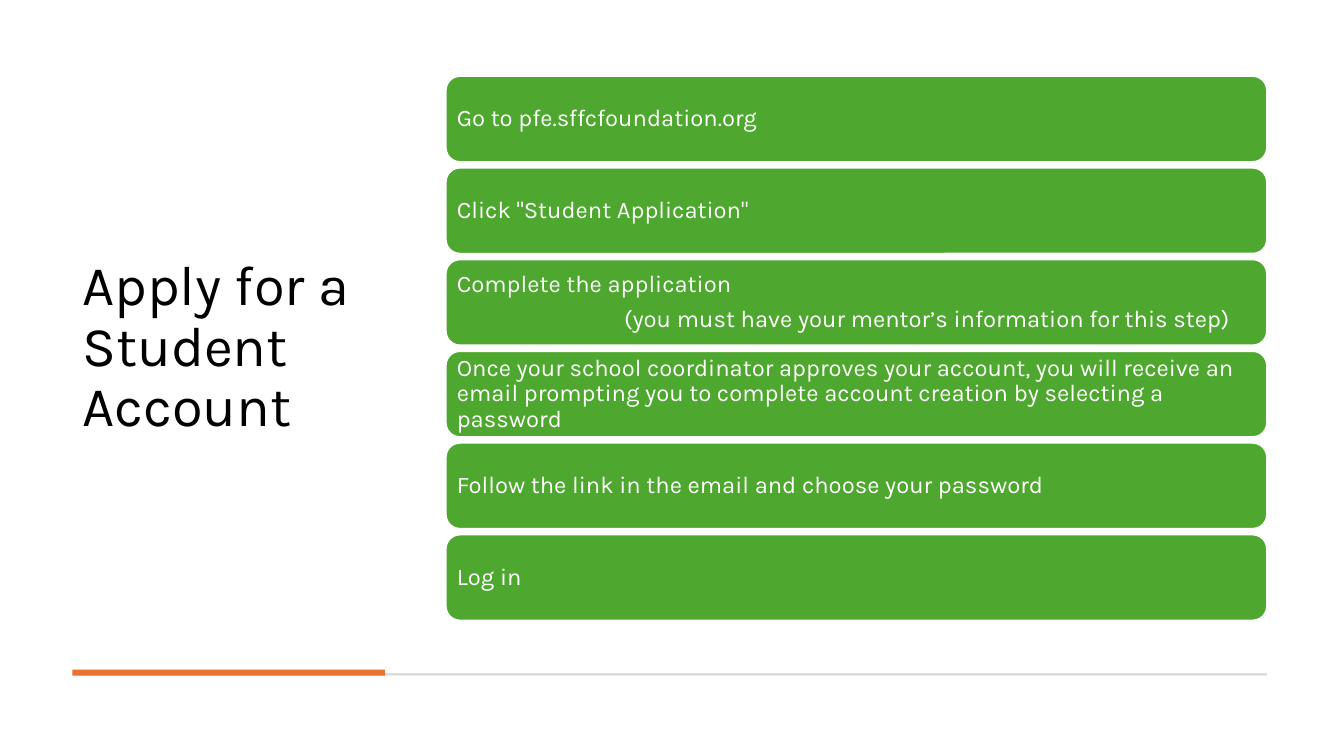
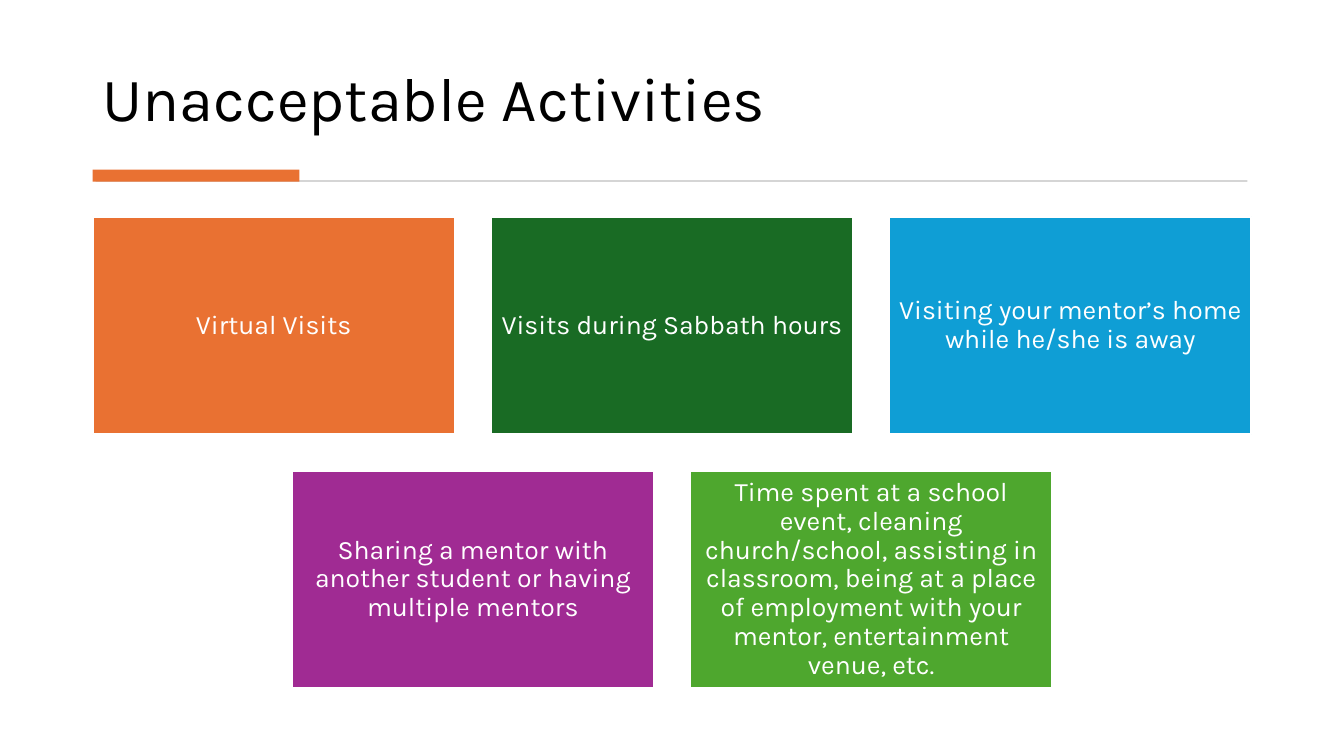
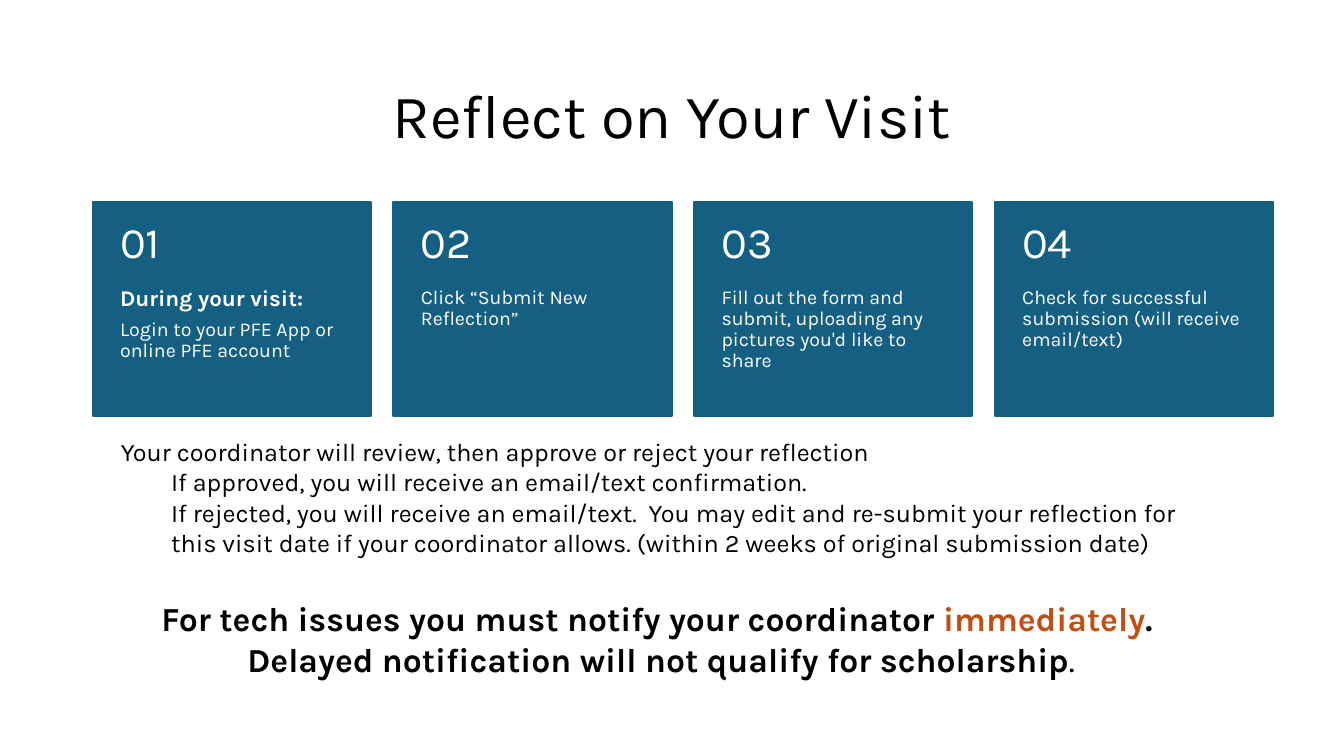
from pptx import Presentation
from pptx.dml.color import RGBColor
from pptx.enum.shapes import MSO_SHAPE
from pptx.enum.text import MSO_ANCHOR, PP_ALIGN
from pptx.util import Pt

COLORS = {
    "black": "000000",
    "white": "FFFFFF",
    "rule": "D5D5D5",
    "orange": "E97132",
    "rust": "C04F15",
    "green": "4EA72E",
    "forest": "196B24",
    "sky": "0F9ED5",
    "purple": "A02B93",
    "teal": "156082",
}
FONT = "Karla"
SLIDE_W, SLIDE_H = 960, 540
DEFAULT_INSETS = (7.2, 3.6, 7.2, 3.6)


def color(name):
    return RGBColor.from_string(COLORS[name])


def apply(target, values):
    for name, value in values.items():
        setattr(target, name, value)


class Deck:
    """Holds the shared style and the slide being filled."""

    def __init__(self):
        self.prs = Presentation()
        apply(self.prs, {"slide_width": Pt(SLIDE_W), "slide_height": Pt(SLIDE_H)})
        self.slide = None

    def new_slide(self):
        self.slide = self.prs.slides.add_slide(self.prs.slide_layouts[6])

    def fill_text(self, shape, paragraphs, size, ink="black", align=PP_ALIGN.LEFT,
                  anchor=MSO_ANCHOR.TOP, insets=DEFAULT_INSETS, spacing=0.9, gap=0):
        """Fill a shape; a paragraph is a string or a dict with runs, indent and size.

        A run is a string or a (string, font values) pair.
        """
        frame = shape.text_frame
        left, top, right, bottom = insets
        apply(frame, {
            "word_wrap": True, "vertical_anchor": anchor,
            "margin_left": Pt(left), "margin_top": Pt(top),
            "margin_right": Pt(right), "margin_bottom": Pt(bottom),
        })
        for index, content in enumerate(paragraphs):
            if isinstance(content, str):
                content = {"runs": [content]}
            paragraph = frame.add_paragraph() if index else frame.paragraphs[0]
            apply(paragraph, {
                "alignment": align, "line_spacing": spacing,
                "space_before": Pt(gap if index else 0), "space_after": Pt(0),
            })
            if "indent" in content:
                paragraph._p.get_or_add_pPr().set("marL", str(Pt(content["indent"])))
            for part in content["runs"]:
                words, look = (part, {}) if isinstance(part, str) else part
                run = paragraph.add_run()
                run.text = words
                apply(run.font, {"name": FONT, "size": Pt(content.get("size", size)),
                                 "bold": look.get("bold", False)})
                run.font.color.rgb = color(look.get("ink", ink))

    def text(self, box, paragraphs, size, **style):
        shape = self.slide.shapes.add_textbox(*map(Pt, box))
        self.fill_text(shape, paragraphs, size, **style)

    def title(self, box, words, size=44, **style):
        self.text(box, [words], size, **style)

    def block(self, box, fill, line=None, kind=MSO_SHAPE.RECTANGLE):
        shape = self.slide.shapes.add_shape(kind, *map(Pt, box))
        shape.shadow.inherit = False
        shape.fill.solid()
        shape.fill.fore_color.rgb = color(fill)
        if line:
            shape.line.color.rgb = color(line)
            shape.line.width = Pt(1.5)
        else:
            shape.line.fill.background()
        return shape

    def divider(self, rule, accent):
        """Thin grey rule with an orange accent at its left end."""
        self.block(rule, "rule")
        self.block(accent, "orange")


def account_slide(deck):
    steps = [
        ["Go to pfe.sffcfoundation.org"],
        ['Click "Student Application"'],
        ["Complete the application",
         {"runs": ["(you must have your mentor’s information for this step)"],
          "indent": 119.5}],
        ["Once your school coordinator approves your account, you will receive "
         "an email prompting you to complete account creation by selecting a password"],
        ["Follow the link in the email and choose your password"],
        ["Log in"],
    ]
    deck.new_slide()
    deck.title((51.8, 33.8, 223.2, 430), "Apply for a Student Account", 40,
               anchor=MSO_ANCHOR.MIDDLE)
    deck.divider((51.8, 481, 853.2, 1.4), (51.8, 478.3, 223.2, 4.3))
    for index, step in enumerate(steps):
        bar = deck.block((318.3, 54.2 + index * 65.5, 586.8, 61.6), "green", "white",
                         MSO_SHAPE.ROUNDED_RECTANGLE)
        deck.fill_text(bar, step, 17, "white", anchor=MSO_ANCHOR.MIDDLE,
                       insets=(5, 5, 5, 5), gap=6)


def activities_slide(deck):
    rows = [
        [("orange", "Virtual Visits"),
         ("forest", "Visits during Sabbath hours"),
         ("sky", "Visiting your mentor’s home while he/she is away")],
        [("purple", "Sharing a mentor with another student or having multiple mentors"),
         ("green", "Time spent at a school event, cleaning church/school, assisting in "
                   "classroom, being at a place of employment with your mentor, "
                   "entertainment venue, etc.")],
    ]
    width, height, gap = 258.6, 155.2, 25.9
    deck.new_slide()
    deck.title((66.2, 20.2, 827.3, 79.9), "Unacceptable Activities",
               anchor=MSO_ANCHOR.BOTTOM)
    deck.divider((68.4, 128.6, 822.6, 1.4), (66.2, 121.2, 147.6, 8.6))
    for row_index, row in enumerate(rows):
        row_left = (SLIDE_W - len(row) * (width + gap) + gap) / 2
        top = 155 + row_index * (height + gap)
        for index, (fill, activity) in enumerate(row):
            tile = deck.block((row_left + index * (width + gap), top, width, height),
                              fill, "white")
            deck.fill_text(tile, [activity], 19, "white", PP_ALIGN.CENTER,
                           MSO_ANCHOR.MIDDLE, (5.7, 5.7, 5.7, 5.7))


def reflection_slide(deck):
    steps = [
        [{"runs": [("During your visit:", {"bold": True})], "size": 16},
         "Login to your PFE App or online PFE account"],
        ["Click “Submit New Reflection”"],
        ["Fill out the form and submit, uploading any pictures you'd like to share"],
        ["Check for successful submission (will receive email/text)"],
    ]
    top, width, number_height = 144, 198.8, 61.2
    deck.new_slide()
    deck.title((66.2, 52.6, 828, 64), "Reflect on Your Visit",
               align=PP_ALIGN.CENTER, anchor=MSO_ANCHOR.MIDDLE)
    for index, step in enumerate(steps):
        left = 66.2 + index * 214.8
        card = deck.block((left, top, width, 153.2), "teal", "teal")
        deck.fill_text(card, step, 14, "white", insets=(19.6, number_height, 19.6, 0),
                       gap=6)
        deck.text((left, top, width, number_height), [f"{index + 1:02}"], 31, ink="white",
                  anchor=MSO_ANCHOR.MIDDLE, insets=(19.6, 13, 19.6, 13))
    bold = {"bold": True}
    deck.text((64.8, 429.1, 815, 61.2), [
        {"runs": [("For tech issues you must notify your coordinator ", bold),
                  ("immediately", {"bold": True, "ink": "rust"}), (". ", bold)]},
        {"runs": [("Delayed notification will not qualify for scholarship", bold), "."]},
    ], 24, align=PP_ALIGN.CENTER, spacing=0.8, gap=6)
    outcomes = [
        "If approved, you will receive an email/text confirmation.",
        "If rejected, you will receive an email/text.  You may edit and re-submit your "
        "reflection for this visit date if your coordinator allows. "
        "(within 2 weeks of original submission date)",
    ]
    deck.text((79.2, 308.2, 801.4, 94.3), [
        "Your coordinator will review, then approve or reject your reflection",
        *({"runs": [outcome], "indent": 36} for outcome in outcomes),
    ], 18, spacing=1.0)


def main():
    deck = Deck()
    for build in (account_slide, activities_slide, reflection_slide):
        build(deck)
    deck.prs.save("out.pptx")


if __name__ == "__main__":
    main()
